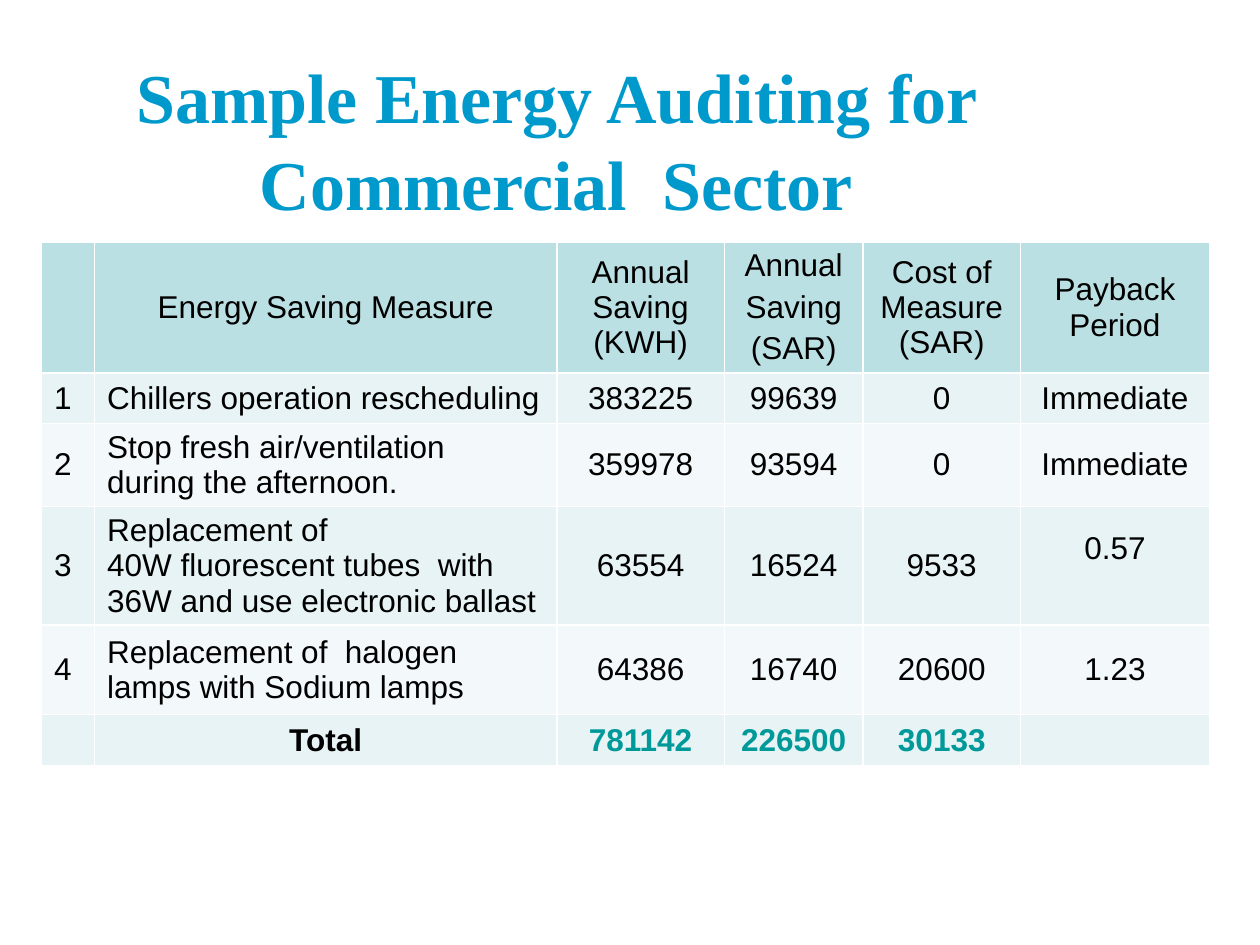
from lxml import etree
from pptx import Presentation
from pptx.dml.color import RGBColor
from pptx.enum import text
from pptx.oxml import ns
from pptx.util import Inches, Pt

COLORS = {
    "title": "0099CC", "text": "000000", "total": "009999", "border": "FFFFFF",
    "header": "BBE0E3", "odd": "E7F3F4", "even": "F3F9FA",
}
COLS = [0.42, 3.67, 1.33, 1.1, 1.25, 1.5]
HEIGHTS = [1.04, 0.4, 0.66, 0.94, 0.71, 0.41]
ROWS = [
    ["", "Energy Saving Measure", "Annual Saving (KWH)", "Annual\nSaving\n(SAR)",
     "Cost of\vMeasure\v(SAR)", "Payback Period"],
    ["1", "Chillers operation rescheduling", "383225", "99639", "0", "Immediate"],
    ["2", "Stop fresh air/ventilation\vduring the afternoon.", "359978", "93594", "0",
     "Immediate"],
    ["3", "Replacement of\v40W fluorescent tubes  with\v36W and use electronic ballast",
     "63554", "16524", "9533", "0.57"],
    ["4", "Replacement of  halogen\vlamps with Sodium lamps", "64386", "16740", "20600",
     "1.23"],
    ["", "Total", "781142", "226500", "30133", ""],
]


def rgb(name):
    return RGBColor.from_string(COLORS[name])


def write(tf, content, size=18, font="Arial", color="text", bold=False,
          centered=True, before=0, spacing=None):
    tf.word_wrap = True
    for i, line in enumerate(content.split("\n")):
        p = tf.add_paragraph() if i else tf.paragraphs[0]
        p.text = line
        p.alignment = text.PP_ALIGN.CENTER if centered else text.PP_ALIGN.LEFT
        if i:
            p.space_before = Pt(before)
        if spacing:
            p.line_spacing = spacing
        p.font.size = Pt(size)
        for r in p.runs:
            r.font.name = font
            r.font.size = Pt(size)
            r.font.bold = bold
            r.font.color.rgb = rgb(color)


def add_borders(cell):
    pr = cell._tc.get_or_add_tcPr()
    for i, side in enumerate(("lnL", "lnR", "lnT", "lnB")):
        ln = etree.Element(ns.qn(f"a:{side}"), w=str(Pt(1)))
        fill = etree.SubElement(ln, ns.qn("a:solidFill"))
        etree.SubElement(fill, ns.qn("a:srgbClr"), val=COLORS["border"])
        pr.insert(i, ln)


def add_title(s, left, top, width, height):
    box = s.shapes.add_textbox(Inches(left), Inches(top), Inches(width), Inches(height))
    write(box.text_frame, "Sample Energy Auditing for Commercial  Sector", size=40,
          font="Times New Roman", color="title", bold=True, spacing=1.04)


def add_savings_table(s, left, top):
    frame = s.shapes.add_table(len(ROWS), len(COLS), Inches(left), Inches(top),
                               Inches(sum(COLS)), Inches(sum(HEIGHTS)))
    table = frame.table
    for column, width in zip(table.columns, COLS):
        column.width = Inches(width)
    last = len(ROWS) - 1
    for i, (values, height) in enumerate(zip(ROWS, HEIGHTS)):
        table.rows[i].height = Inches(height)
        band = "header" if i == 0 else "odd" if i % 2 else "even"
        for j, value in enumerate(values):
            cell = table.cell(i, j)
            cell.vertical_anchor = text.MSO_ANCHOR.MIDDLE
            cell.fill.solid()
            cell.fill.fore_color.rgb = rgb(band)
            add_borders(cell)
            write(cell.text_frame, value, bold=i == last, before=3.6,
                  color="total" if i == last and j > 1 else "text",
                  centered=i in (0, last) or j > 1)
    table.cell(3, 5).margin_bottom = Inches(0.33)


def main():
    prs = Presentation()
    prs.slide_width, prs.slide_height = Inches(10), Inches(7.5)
    s = prs.slides.add_slide(prs.slide_layouts[6])
    add_savings_table(s, 0.33, 1.92)
    add_title(s, 0.5, 0.35, 7.83, 1.25)
    prs.save("out.pptx")


if __name__ == "__main__":
    main()
